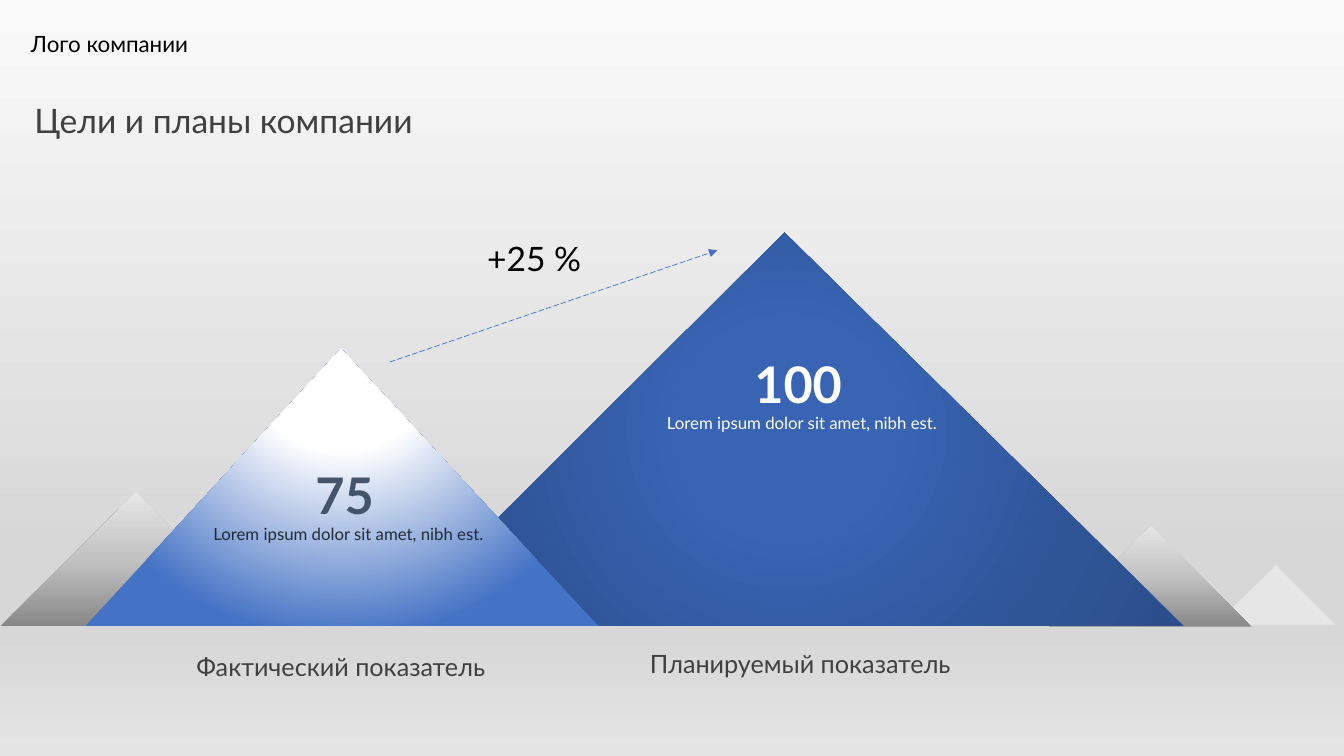
from dataclasses import dataclass
from typing import Any, Union

from lxml import etree
from pptx import Presentation
from pptx.dml.color import RGBColor
from pptx.dml.fill import FillFormat
from pptx.enum.dml import MSO_LINE
from pptx.enum.shapes import MSO_CONNECTOR
from pptx.enum.text import MSO_ANCHOR, MSO_AUTO_SIZE, PP_ALIGN
from pptx.oxml import parse_xml
from pptx.oxml.ns import nsdecls, qn
from pptx.slide import Slide
from pptx.text.text import TextFrame
from pptx.util import Inches, Pt

LEFT, CENTER = PP_ALIGN.LEFT, PP_ALIGN.CENTER
TOP = MSO_ANCHOR.TOP
GROW = MSO_AUTO_SIZE.SHAPE_TO_FIT_TEXT
STRAIGHT = MSO_CONNECTOR.STRAIGHT
LONG_DASH = MSO_LINE.LONG_DASH

COLS, ROWS = 160, 90
CELL = Inches(1) / 12


@dataclass(frozen=True)
class Gradient:
    """Stops run in percent; a focus (left, top, right, bottom) makes it radial."""
    stops: tuple[tuple[int, str], ...]
    angle: int = 0
    focus: tuple[int, ...] = ()


@dataclass(frozen=True)
class Theme:
    font: str = "Lato"
    gray: str = "404040"
    black: str = "000000"
    white: str = "FFFFFF"
    slate: str = "44546A"
    ink: str = "222A35"
    blue: str = "4472C4"
    pale: str = "E7E6E6"
    figure: int = 36
    title: int = 24
    label: int = 18
    logo: int = 16
    note: int = 12
    sky: Gradient = Gradient(
        ((0, "FAFAFA"), (74, "D7D7D7"), (83, "D7D7D7"), (100, "E4E4E4")), 90)
    rock: Gradient = Gradient(((0, "898888"), (50, "C3C2C2"), (100, "E7E6E6")), 270)
    plan: Gradient = Gradient(
        ((0, "3864B3"), (23, "3864B3"), (69, "2F5597"), (97, "2C4F8C")),
        focus=(50, 50, 50, 50))
    snow: Gradient = Gradient(
        ((0, "FFFFFF"), (35, "FFFFFF"), (100, "4472C4")), focus=(50, -80, 50, 180))


T = Theme()
Paint = Union[str, Gradient]


@dataclass(frozen=True)
class Mountain:
    left: float
    right: float
    base: float
    apex: tuple[float, float]
    paint: Paint


@dataclass(frozen=True)
class Line:
    text: str
    size: int
    color: str
    bold: bool = False


@dataclass(frozen=True)
class Label:
    box: tuple[float, float, float, float]
    lines: tuple[Line, ...]
    align: PP_ALIGN = LEFT


LOREM = "Lorem ipsum dolor sit amet, nibh est. "

MOUNTAINS = (
    Mountain(18.7, 44.2, 74.5, (31.6, 61.9), T.pale),
    Mountain(0.1, 32, 74.5, (16.2, 58.6), T.rock),
    Mountain(144.7, 159, 74.4, (151.9, 67.3), T.pale),
    Mountain(124.9, 149, 74.6, (137, 62.6), T.rock),
    Mountain(46.4, 140.9, 74.5, (93.4, 27.7), T.plan),
    Mountain(10.2, 71.2, 74.5, (40.6, 41.5), T.snow),
)

LABELS = (
    Label((77.5, 41.4, 36.5, 10.9),
          (Line("100 ", T.figure, T.white, True), Line(LOREM, T.note, T.white)), CENTER),
    Label((76.2, 76.6, 39.2, 4.8), (Line("Планируемый показатель", T.label, T.gray),)),
    Label((22.2, 77, 37.1, 4.8), (Line("Фактический показатель", T.label, T.gray),)),
    Label((23.5, 54.6, 36.5, 10.9),
          (Line("75 ", T.figure, T.slate, True), Line(LOREM, T.note, T.ink)), CENTER),
    Label((56.8, 27.7, 15, 6), (Line("+25 %", T.title, T.black),)),
    Label((2.5, 3, 21.1, 4.4), (Line("Лого компании", T.logo, T.black),), CENTER),
)

TITLE = Label((2.9, 11.3, 125.6, 15.7), (Line("Цели и планы компании", T.title, T.gray),))
GROWTH = (46.4, 43.1, 85.4, 29.8)


def grid(*cells: float) -> list[int]:
    """Turn grid cells into slide lengths."""
    return [round(c * CELL) for c in cells]


def gradient_xml(g: Gradient) -> Any:
    stops = "".join(f'<a:gs pos="{pos * 1000}"><a:srgbClr val="{color}"/></a:gs>'
                    for pos, color in g.stops)
    if g.focus:
        sides = " ".join(f'{side}="{share * 1000}"' for side, share in zip("ltrb", g.focus))
        course = f'<a:path path="circle"><a:fillToRect {sides}/></a:path>'
    else:
        course = f'<a:lin ang="{g.angle * 60000}" scaled="0"/>'
    return parse_xml(f'<a:gradFill {nsdecls("a")} rotWithShape="1">'
                     f'<a:gsLst>{stops}</a:gsLst>{course}</a:gradFill>')


def apply_paint(fill: FillFormat, owner: Any, paint: Paint) -> None:
    """Fill with a plain colour, or swap in a gradient inside the owner element."""
    fill.solid()
    if isinstance(paint, str):
        fill.fore_color.rgb = RGBColor.from_string(paint)
    else:
        solid = owner.find(".//" + qn("a:solidFill"))
        solid.getparent().replace(solid, gradient_xml(paint))


def add_mountain(s: Slide, m: Mountain) -> None:
    left, right, base = grid(m.left, m.right, m.base)
    outline = s.shapes.build_freeform(left, base, scale=1.0)
    outline.add_line_segments([(right, base), tuple(grid(*m.apex))], close=True)
    sp = outline.convert_to_shape()
    sp.shadow.inherit = False
    sp.line.fill.background()
    apply_paint(sp.fill, sp.element, m.paint)


def write(tf: TextFrame, label: Label) -> None:
    for i, line in enumerate(label.lines):
        p = tf.add_paragraph() if i else tf.paragraphs[0]
        p.text, p.alignment = line.text, label.align
        p.font.name, p.font.size, p.font.bold = T.font, Pt(line.size), line.bold
        p.font.color.rgb = RGBColor.from_string(line.color)


def add_label(s: Slide, label: Label) -> None:
    tf = s.shapes.add_textbox(*grid(*label.box)).text_frame
    tf.word_wrap = False
    tf.auto_size = GROW
    write(tf, label)


def add_title(s: Slide, label: Label) -> None:
    sp = s.shapes.title
    sp.left, sp.top, sp.width, sp.height = grid(*label.box)
    sp.text_frame.vertical_anchor = TOP
    write(sp.text_frame, label)


def add_arrow(s: Slide, ends: tuple[float, ...]) -> None:
    arrow = s.shapes.add_connector(STRAIGHT, *grid(*ends))
    arrow.line.color.rgb = RGBColor.from_string(T.blue)
    arrow.line.width = Pt(0.5)
    arrow.line.dash_style = LONG_DASH
    etree.SubElement(arrow.line._get_or_add_ln(), qn("a:tailEnd"), type="triangle")
    etree.SubElement(arrow.element.spPr, qn("a:effectLst"))


def main() -> None:
    prs = Presentation()
    prs.slide_width, prs.slide_height = grid(COLS, ROWS)
    s = prs.slides.add_slide(prs.slide_layouts.get_by_name("Title Only"))
    apply_paint(s.background.fill, s.element, T.sky)
    add_title(s, TITLE)
    for mountain in MOUNTAINS:
        add_mountain(s, mountain)
    for label in LABELS:
        add_label(s, label)
    add_arrow(s, GROWTH)
    prs.save("out.pptx")


if __name__ == "__main__":
    main()
